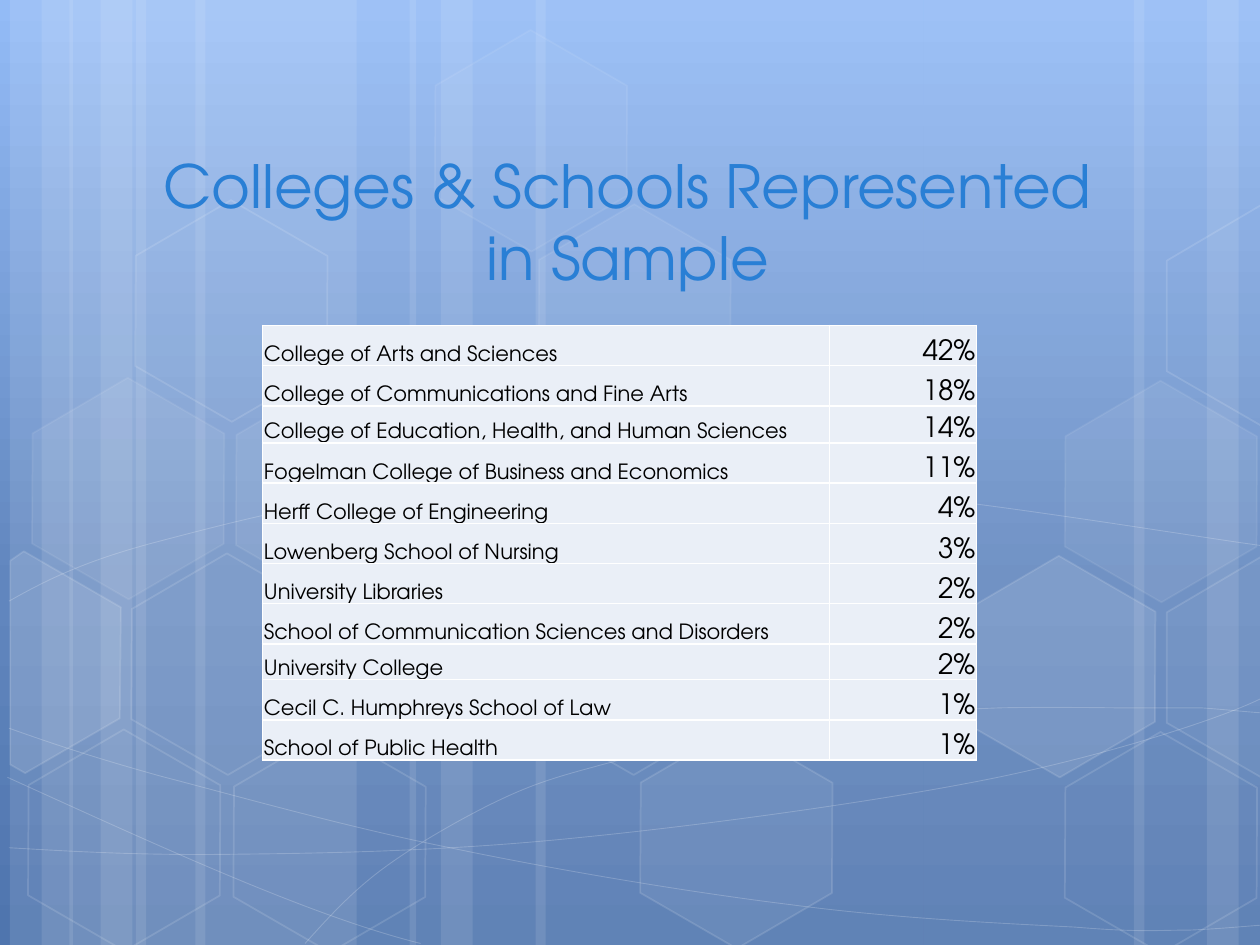
from copy import deepcopy
from dataclasses import dataclass

from lxml.etree import SubElement
from pptx import Presentation
from pptx.dml.color import RGBColor as Color
from pptx.enum.shapes import MSO_SHAPE as Preset
from pptx.enum.text import MSO_ANCHOR as Anchor, MSO_AUTO_SIZE as AutoSize, PP_ALIGN as Align
from pptx.oxml.ns import qn
from pptx.util import Cm, Pt


@dataclass(frozen=True)
class Theme:
    """Hold the colours, font and type sizes."""
    font: str = "TeX Gyre Adventor"
    title: str = "297FD5"
    text: str = "000000"
    cell: str = "EAEFF7"
    light: str = "FFFFFF"
    gradient: tuple = ((0, "93BBF6"), (0.62, "6186BE"), (1, "4F75AE"))
    title_size: int = 34
    label_size: int = 12
    value_size: int = 16


STRIPES = [
    (2.74, 4.45), (0.2, 1.27), (0.84, 2.11), (3.94, 4.45), (1.4, 1.27), (2.03, 2.11),
    (18.62, 4.45), (24.33, 1.27), (22.86, 2.11), (10.8, 7.82), (8.26, 1.27), (8.89, 2.11),
]
CURVES = [
    [(0.18, 17.09), (1.55, 17.17), (2.92, 17.25), (4.83, 17.22), (6.73, 17.2), (9.09, 17.15),
     (11.63, 16.89), (14.17, 16.64), (17.78, 16.15), (20.12, 15.67), (22.43, 15.19),
     (24.82, 14.43), (25.58, 14)],
    [(0.18, 12.12), (0.91, 11.71), (1.65, 11.33), (3.07, 10.95), (4.52, 10.57), (6.58, 10.01),
     (8.81, 9.83), (11.07, 9.65), (13.82, 9.63), (16.61, 9.83), (19.41, 10.03),
     (24.05, 10.82), (25.58, 11.02)],
    [(0.15, 15.67), (3.23, 17.07), (6.27, 18.47), (8.48, 19.02)],
    [(0.18, 14.68), (0.97, 14.96), (1.78, 15.24), (3.25, 15.65), (4.72, 16.03), (6.93, 16.66),
     (9.07, 17.09), (11.18, 17.53), (13.84, 17.98), (15.95, 18.24), (18.06, 18.52),
     (20.32, 18.62), (21.67, 18.69), (22.99, 18.8), (23.34, 18.75), (24, 18.75),
     (24.66, 18.72), (25.12, 18.67), (25.58, 18.64)],
    [(6.15, 19.02), (6.6, 18.52), (7.06, 18.01), (7.67, 17.55), (8.28, 17.09), (9.14, 16.59),
     (9.86, 16.23), (10.57, 15.88), (11, 15.72), (11.94, 15.47), (12.85, 15.21),
     (14.55, 14.86), (15.44, 14.68), (16.36, 14.5), (16.48, 14.5), (17.27, 14.45),
     (18.06, 14.38), (19.3, 14.3), (20.17, 14.27), (21.06, 14.25), (22.5, 14.27),
     (22.5, 14.27), (23.07, 14.27), (23.64, 14.27), (24.21, 14.27), (24.66, 14.3),
     (25.1, 14.35), (25.55, 14.38)],
]
HEXAGONS = [
    (8.53, 7.95, 10, 12), (10.54, 11.46, 0, 12), (10.57, 4.42, 7, 8), (8.48, 0.91, 4, 8),
    (12.62, 14.96, 6, 12), (0.28, 15.01, 0, 12), (0.36, 7.92, 7, 8), (2.36, 11.46, 0, 12),
    (4.42, 15.04, 0, 12), (4.47, 7.95, 7, 8), (2.44, 4.34, 0, 12), (19.13, 11.51, 10, 12),
    (21.18, 15.06, 0, 12), (21.18, 7.98, 7, 8),
]
LEFT_CUT = [(-1.75, -1.63), (-1.61, -1.93), (0.65, -1.93), (1.75, 0.02), (0.65, 1.93), (0.3, 1.93)]
RIGHT_CUT = [(-1.73, 0), (-0.64, -1.93), (-0.36, -1.93), (1.73, 1.75), (1.63, 1.93), (-0.62, 1.93)]
CUT_HEXAGONS = [
    (LEFT_CUT, 0.91, 13.59, 10), (RIGHT_CUT, 25.02, 13.21, 4), (RIGHT_CUT, 25.02, 6.12, 0),
]
COLLEGES = [
    ("College of Arts and Sciences", "42%", 0.81),
    ("College of Communications and Fine Arts", "18%", 0.81),
    ("College of Education, Health, and Human Sciences", "14%", 0.75),
    ("Fogelman College of Business and Economics", "11%", 0.81),
    ("Herff College of Engineering", "4%", 0.81),
    ("Lowenberg School of Nursing", "3%", 0.81),
    ("University Libraries", "2%", 0.81),
    ("School of Communication Sciences and Disorders", "2%", 0.81),
    ("University College", "2%", 0.72),
    ("Cecil C. Humphreys School of Law", "1%", 0.81),
    ("School of Public Health", "1%", 0.81),
]


def write_text(frame, text, *, font, size, color, align=Align.LEFT):
    """Write one formatted paragraph into a text frame."""
    paragraph = frame.paragraphs[0]
    paragraph.alignment = align
    run = paragraph.add_run()
    run.text = text
    run.font.name = font
    run.font.size = Pt(size)
    run.font.color.rgb = Color.from_string(color)


class SlideBuilder:
    """Draw styled elements on the current slide and its layout."""

    def __init__(self, slide, theme):
        """Keep the slide and theme and open a group for the decoration."""
        self.slide = slide
        self.theme = theme
        self.decoration = slide.shapes.add_group_shape()

    def paint(self, fill, opacity):
        """Apply translucent white to a fill."""
        fill.solid()
        fill.fore_color.rgb = Color.from_string(self.theme.light)
        color = fill._xPr.find(qn("a:solidFill"))[0]
        SubElement(color, qn("a:alpha"), val=str(opacity * 1000))

    def style(self, shape, fill=0, line=0, width=1):
        """Set the fill and line opacity in percent."""
        shape.shadow.inherit = False
        for part, opacity in ((shape.fill, fill), (shape.line.fill, line)):
            if opacity:
                self.paint(part, opacity)
            else:
                part.background()
        if line:
            shape.line.width = Pt(width)

    def background(self):
        """Fill the background with a vertical gradient."""
        fill = self.slide.background.fill
        fill.gradient()
        fill.gradient_angle = 270
        first = next(self.slide._element.iter(qn("a:gs")))
        first.addnext(deepcopy(first))
        for stop, (position, color) in zip(fill.gradient_stops, self.theme.gradient):
            stop.position = position
            stop.color.rgb = Color.from_string(color)

    def stripe(self, left, width):
        """Add a full-height light stripe."""
        shape = self.decoration.shapes.add_shape(
            Preset.RECTANGLE, Cm(left), 0, Cm(width), Cm(19.05))
        self.style(shape, fill=10)

    def hexagon(self, left, top, fill, line):
        """Add an upright hexagon."""
        shape = self.decoration.shapes.add_shape(
            Preset.HEXAGON, Cm(left), Cm(top), Cm(4.45), Cm(3.86))
        shape.adjustments[0] = 0.285
        shape.rotation = 30
        self.style(shape, fill, line)

    def outline(self, points, closed):
        """Return a freeform through the points."""
        start, *rest = [(Cm(x), Cm(y)) for x, y in points]
        builder = self.decoration.shapes.build_freeform(*start)
        builder.add_line_segments(rest, close=closed)
        return builder.convert_to_shape()

    def cut_hexagon(self, offsets, center_x, center_y, fill):
        """Add a hexagon cut off at the slide edge."""
        shape = self.outline([(center_x + x, center_y + y) for x, y in offsets], closed=True)
        shape.rotation = 30
        self.style(shape, fill, line=12)

    def curve(self, points):
        """Add a thin line of cubic segments."""
        shape = self.outline(points, closed=False)
        segments = list(shape._element.iter(qn("a:lnTo")))
        for index in range(0, len(segments), 3):
            cubic = SubElement(segments[index].getparent(), qn("a:cubicBezTo"))
            for segment in segments[index:index + 3]:
                cubic.append(segment[0])
                segment.getparent().remove(segment)
        self.style(shape, line=20, width=0.5)

    def move_decoration_to_layout(self):
        """Move the decoration behind the placeholders of the layout."""
        group = self.decoration._element
        for properties in group.iter(qn("p:cNvPr")):
            properties.set("id", str(int(properties.get("id")) + 100))
        self.slide.slide_layout.shapes._spTree.insert(2, group)

    def title(self, text):
        """Place the title."""
        theme = self.theme
        shape = self.slide.shapes.title
        shape.left, shape.top, shape.width, shape.height = Cm(2.9), Cm(2.84), Cm(19.51), Cm(3.18)
        frame = shape.text_frame
        frame.word_wrap = True
        frame.auto_size = AutoSize.NONE
        frame.vertical_anchor = Anchor.BOTTOM
        write_text(frame, text, font=theme.font, size=theme.title_size,
                   color=theme.title, align=Align.CENTER)

    def cell(self, cell, text, size, align):
        """Fill one table cell with text."""
        theme = self.theme
        cell.margin_left = cell.margin_right = cell.margin_top = Cm(0.03)
        cell.margin_bottom = 0
        cell.vertical_anchor = Anchor.BOTTOM
        cell.fill.solid()
        cell.fill.fore_color.rgb = Color.from_string(theme.cell)
        write_text(cell.text_frame, text, font=theme.font, size=size, color=theme.text, align=align)

    def table(self, rows):
        """Add the table of colleges and shares."""
        height = sum(row[2] for row in rows)
        table = self.slide.shapes.add_table(
            len(rows), 2, Cm(5.29), Cm(6.56), Cm(14.4), Cm(height)).table
        table.first_row = table.horz_banding = False
        table.columns[0].width, table.columns[1].width = Cm(11.43), Cm(2.97)
        for index, (label, value, row_height) in enumerate(rows):
            table.rows[index].height = Cm(row_height)
            self.cell(table.cell(index, 0), label, self.theme.label_size, Align.LEFT)
            self.cell(table.cell(index, 1), value, self.theme.value_size, Align.RIGHT)


def main():
    """Build and save the presentation."""
    presentation = Presentation()
    presentation.slide_width, presentation.slide_height = Cm(25.4), Cm(19.05)
    slide = presentation.slides.add_slide(presentation.slide_layouts[5])
    builder = SlideBuilder(slide, Theme())
    builder.background()
    for draw, items in ((builder.stripe, STRIPES), (builder.hexagon, HEXAGONS),
                        (builder.cut_hexagon, CUT_HEXAGONS)):
        for item in items:
            draw(*item)
    for points in CURVES:
        builder.curve(points)
    builder.move_decoration_to_layout()
    builder.title("Colleges & Schools Represented in Sample")
    builder.table(COLLEGES)
    presentation.save("out.pptx")


if __name__ == "__main__":
    main()
